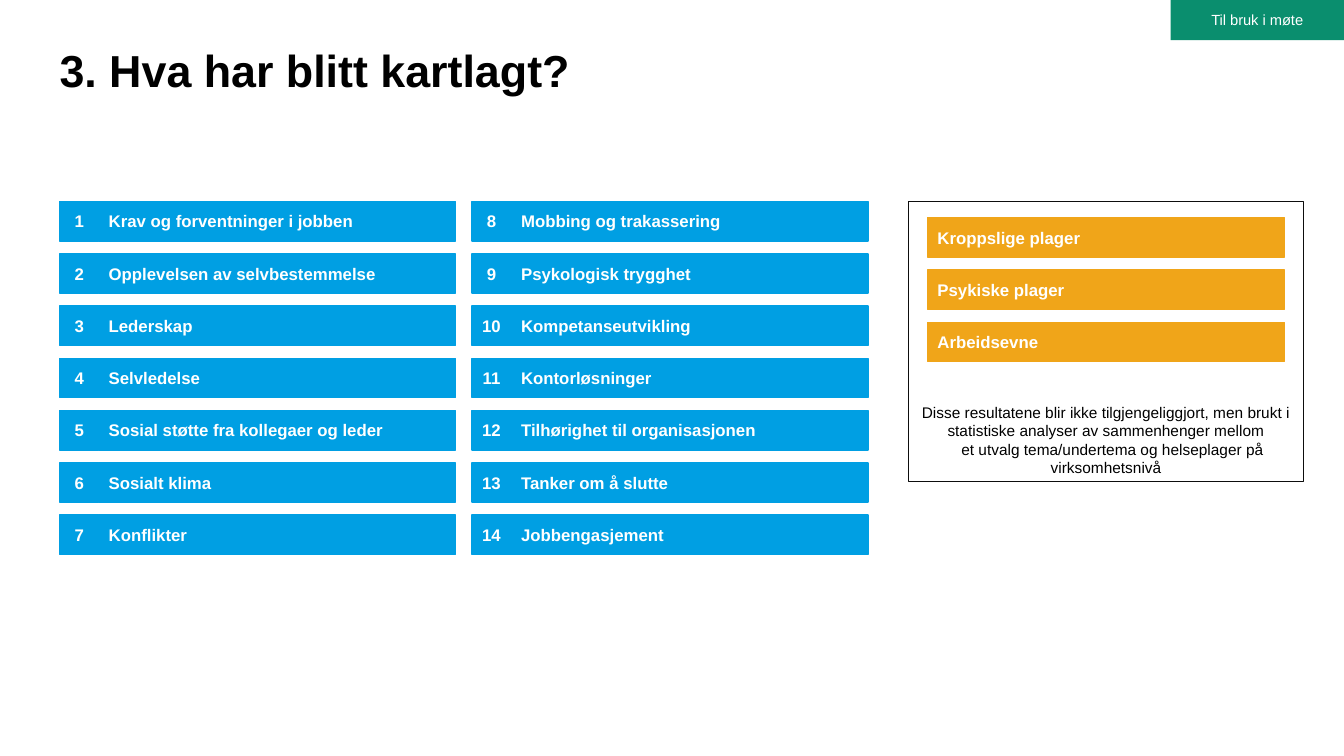
from pptx import Presentation
from pptx.dml.color import RGBColor
from pptx.enum.shapes import MSO_SHAPE
from pptx.enum.text import MSO_ANCHOR, PP_ALIGN
from pptx.util import Inches, Pt

TITLE = "3. Hva har blitt kartlagt?"
TAG = "Til bruk i møte"
THEMES = [
    "Krav og forventninger i jobben",
    "Opplevelsen av selvbestemmelse",
    "Lederskap",
    "Selvledelse",
    "Sosial støtte fra kollegaer og leder",
    "Sosialt klima",
    "Konflikter",
    "Mobbing og trakassering",
    "Psykologisk trygghet",
    "Kompetanseutvikling",
    "Kontorløsninger",
    "Tilhørighet til organisasjonen",
    "Tanker om å slutte",
    "Jobbengasjement",
]
HEALTH = ["Kroppslige plager", "Psykiske plager", "Arbeidsevne"]
NOTE = [
    "Disse resultatene blir ikke tilgjengeliggjort, men brukt i statistiske analyser av sammenhenger mellom",
    "et utvalg tema/undertema og helseplager på virksomhetsnivå",
]

FONT = "Arial"
BLUE = RGBColor(0x00, 0x9F, 0xE3)
ORANGE = RGBColor(0xF0, 0xA5, 0x19)
GREEN = RGBColor(0x0A, 0x8E, 0x6E)
BLACK = RGBColor(0x00, 0x00, 0x00)
FRAME = RGBColor(0x0D, 0x0D, 0x0D)
WHITE = RGBColor(0xFF, 0xFF, 0xFF)

LEFT, TOP = 0.59, 2.0
BAR_WIDTH, BAR_HEIGHT = 3.54, 0.39
ROWS = 7
COLUMN_PITCH = 4.09
ROW_PITCH = (5.11 - TOP) / (ROWS - 1)
PANEL_LEFT, PANEL_WIDTH, PANEL_HEIGHT = 9.01, 3.92, 2.78
HEALTH_LEFT = PANEL_LEFT + (PANEL_WIDTH - BAR_WIDTH) / 2
HEALTH_TOP = 2.16


def write(frame, lines, size, color, bold=False, align=PP_ALIGN.LEFT):
    frame.word_wrap = True
    for index, line in enumerate(lines):
        paragraph = frame.paragraphs[0] if index == 0 else frame.add_paragraph()
        paragraph.alignment = align
        run = paragraph.add_run()
        run.text = line
        run.font.name = FONT
        run.font.size = Pt(size)
        run.font.bold = bold
        run.font.color.rgb = color


def add_box(slide, left, top, width, height, fill=None, line=None):
    shape = slide.shapes.add_shape(
        MSO_SHAPE.RECTANGLE, Inches(left), Inches(top), Inches(width), Inches(height))
    shape.shadow.inherit = False
    if fill is None:
        shape.fill.background()
    else:
        shape.fill.solid()
        shape.fill.fore_color.rgb = fill
    if line is None:
        shape.line.fill.background()
    else:
        shape.line.color.rgb = line
        shape.line.width = Pt(1)
    shape.text_frame.vertical_anchor = MSO_ANCHOR.MIDDLE
    return shape


def add_bar(slide, left, top, text, color):
    bar = add_box(slide, left, top, BAR_WIDTH, BAR_HEIGHT, color, color)
    write(bar.text_frame, [text], 12, WHITE, bold=True)


def add_number(slide, left, top, number):
    square = add_box(slide, left, top, BAR_HEIGHT, BAR_HEIGHT, BLUE, BLUE)
    square.text_frame.margin_left = square.text_frame.margin_right = 0
    write(square.text_frame, [str(number)], 12, WHITE, bold=True, align=PP_ALIGN.CENTER)


def add_title(slide):
    box = slide.shapes.add_textbox(Inches(LEFT), Inches(0.48), Inches(5.22), Inches(0.77))
    frame = box.text_frame
    frame.margin_left = frame.margin_right = frame.margin_top = frame.margin_bottom = 0
    write(frame, [TITLE], 32, BLACK, bold=True)
    frame.paragraphs[0].line_spacing = 0.9


def add_health_panel(slide):
    panel = add_box(slide, PANEL_LEFT, TOP, PANEL_WIDTH, PANEL_HEIGHT, line=FRAME)
    frame = panel.text_frame
    frame.vertical_anchor = MSO_ANCHOR.BOTTOM
    write(frame, NOTE, 11, BLACK, align=PP_ALIGN.CENTER)
    properties = frame.paragraphs[1]._p.get_or_add_pPr()
    properties.set("indent", str(Inches(0.13)))
    for row, text in enumerate(HEALTH):
        add_bar(slide, HEALTH_LEFT, HEALTH_TOP + row * ROW_PITCH, text, ORANGE)


def main():
    presentation = Presentation()
    presentation.slide_width = Inches(13.33)
    presentation.slide_height = Inches(7.5)
    slide = presentation.slides.add_slide(presentation.slide_layouts[6])

    add_title(slide)
    for index, theme in enumerate(THEMES):
        column, row = divmod(index, ROWS)
        left = LEFT + column * COLUMN_PITCH
        top = TOP + row * ROW_PITCH
        add_bar(slide, left + BAR_HEIGHT, top, theme, BLUE)
        add_number(slide, left, top, index + 1)
    add_health_panel(slide)

    tag = add_box(slide, 11.61, 0, 1.72, 0.4, GREEN)
    write(tag.text_frame, [TAG], 10.5, WHITE, align=PP_ALIGN.CENTER)

    presentation.save("out.pptx")


if __name__ == "__main__":
    main()
